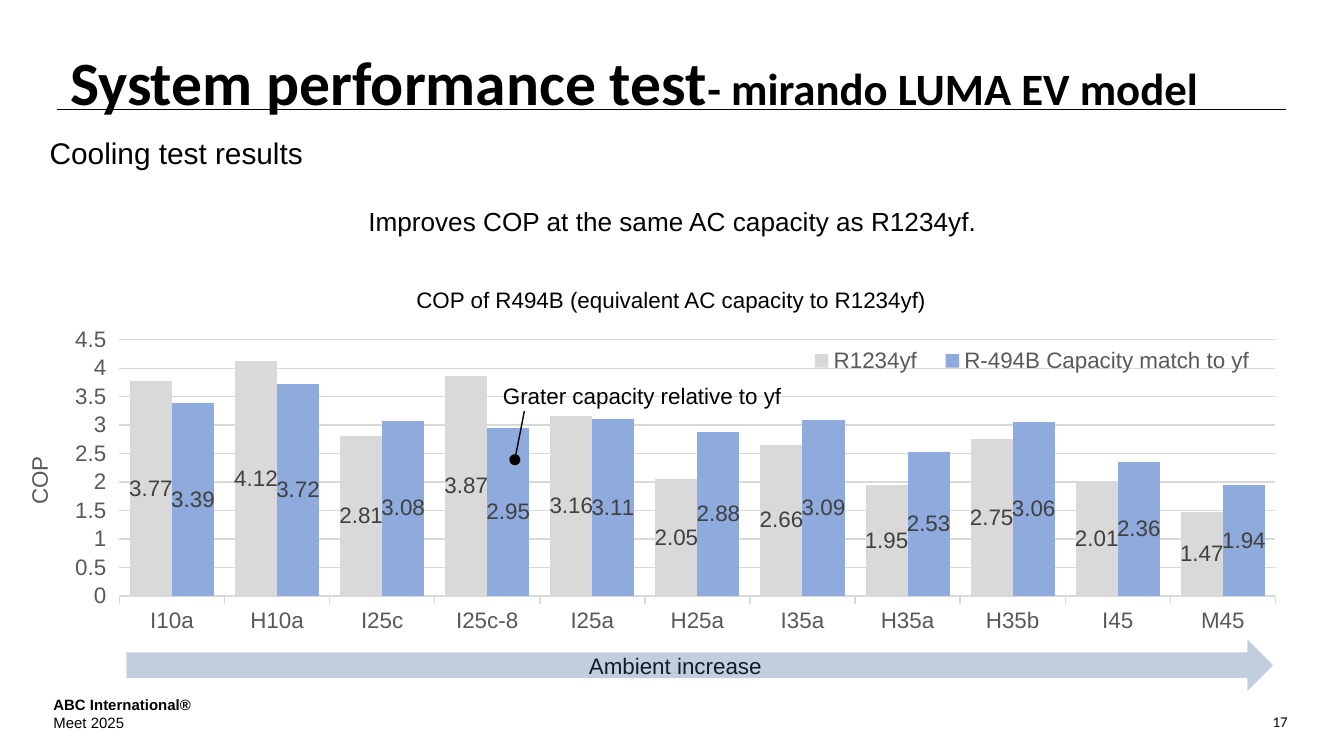
from lxml.etree import SubElement
from pptx import Presentation
from pptx.chart.data import CategoryChartData
from pptx.dml.color import RGBColor
from pptx.enum.chart import XL_CHART_TYPE as ChartType, XL_LABEL_POSITION as LabelPos
from pptx.enum.chart import XL_LEGEND_POSITION as LegendPos, XL_TICK_MARK as Tick
from pptx.enum.shapes import MSO_CONNECTOR as Connector, MSO_SHAPE as Shape
from pptx.enum.text import MSO_ANCHOR as Anchor, PP_ALIGN as Align
from pptx.oxml import parse_xml
from pptx.oxml.ns import nsdecls, qn
from pptx.util import Cm, Pt

BLACK = RGBColor(0x00, 0x00, 0x00)
WHITE = RGBColor(0xFF, 0xFF, 0xFF)
AXIS_GREY = RGBColor(0x59, 0x59, 0x59)
LABEL_GREY = RGBColor(0x40, 0x40, 0x40)
LIGHT_GREY = RGBColor(0xD9, 0xD9, 0xD9)
BAR_BLUE = RGBColor(0x8F, 0xAA, 0xDC)
ARROW_BLUE = RGBColor(0x37, 0x60, 0x92)

CONDITIONS = ["I10a", "H10a", "I25c", "I25c-8", "I25a", "H25a",
              "I35a", "H35a", "H35b", "I45", "M45"]
COP_SERIES = [
    ("R1234yf", LIGHT_GREY,
     [3.77, 4.12, 2.81, 3.87, 3.16, 2.05, 2.66, 1.95, 2.75, 2.01, 1.47]),
    ("R-494B Capacity match to yf", BAR_BLUE,
     [3.39, 3.72, 3.08, 2.95, 3.11, 2.88, 3.09, 2.53, 3.06, 2.36, 1.94]),
]


def apply(target, values):
    """Set every attribute in values on the target."""
    for name, value in values.items():
        setattr(target, name, value)


def style_font(font, size, color=BLACK, bold=False, name="Arial"):
    """Give a font its face, size, weight and colour."""
    apply(font, {"name": name, "size": Pt(size), "bold": bold})
    font.color.rgb = color


def add_run(paragraph, text, size, **style):
    """Append a styled run to a paragraph."""
    run = paragraph.add_run()
    run.text = text
    style_font(run.font, size, **style)


def add_text(slide, box, lines, size, align=Align.LEFT, anchor=Anchor.TOP,
             inset=True, after=0, name="Arial"):
    """Place lines of (text, bold) in a box."""
    frame = slide.shapes.add_textbox(*map(Cm, box)).text_frame
    apply(frame, {"word_wrap": True, "vertical_anchor": anchor})
    if not inset:
        apply(frame, dict.fromkeys(
            ("margin_left", "margin_top", "margin_right", "margin_bottom"), 0))
    for index, (text, bold) in enumerate(lines):
        paragraph = frame.add_paragraph() if index else frame.paragraphs[0]
        apply(paragraph, {"alignment": align, "space_after": Pt(after)})
        add_run(paragraph, text, size, bold=bold, name=name)


def add_line(slide, start, end, width, tail=None):
    """Draw a black line with an optional end mark."""
    line = slide.shapes.add_connector(Connector.STRAIGHT, *map(Cm, start + end))
    line.line.width = Pt(width)
    line.line.color.rgb = BLACK
    if tail:
        SubElement(line.line._get_or_add_ln(), qn("a:tailEnd"), type=tail)
    SubElement(line._element.spPr, qn("a:effectLst"))


def add_heading(slide, box):
    """Fill the title placeholder and rule it off."""
    left, top, width, height = box
    title = slide.shapes.title
    apply(title, dict(zip(("left", "top", "width", "height"), map(Cm, box))))
    frame = title.text_frame
    apply(frame, {"word_wrap": True, "vertical_anchor": Anchor.TOP,
                  "margin_top": Cm(0.23), "margin_bottom": 0})
    paragraph = frame.paragraphs[0]
    apply(paragraph, {"alignment": Align.LEFT, "line_spacing": 0.9})
    for text, size in (("System performance test", 33), ("- mirando LUMA EV model", 24)):
        add_run(paragraph, text, size, bold=True, name="Calibri")
    rule_y = top + height + 0.18
    add_line(slide, (left, rule_y), (left + width, rule_y), 0.5)


def add_footer(slide, box):
    """Place the organiser at the left and the page number at the right."""
    left, top, width, height = box
    add_text(slide, (left, top, 7.29, height),
             [("ABC International®", True), ("Meet 2025", False)], 8)
    add_text(slide, (left + width - 5.46, top + 0.31, 5.46, 0.61), [("17", False)], 8,
             align=Align.RIGHT, name="Calibri")


def place_layout(part, x, y, width, height, inner=False):
    """Fix a chart part by fractions of the chart."""
    target = '<c:layoutTarget val="inner"/>' if inner else ""
    layout = parse_xml(
        f'<c:layout {nsdecls("c")}><c:manualLayout>{target}'
        f'<c:xMode val="edge"/><c:yMode val="edge"/><c:x val="{x}"/><c:y val="{y}"/>'
        f'<c:w val="{width}"/><c:h val="{height}"/></c:manualLayout></c:layout>')
    for old in part.findall(qn("c:layout")):
        part.remove(old)
    if inner:
        part.insert(0, layout)
    else:
        part.find(qn("c:legendPos")).addnext(layout)


def add_cop_chart(slide, box):
    """Chart the COP of both refrigerants for each test condition."""
    data = CategoryChartData()
    data.categories = CONDITIONS
    for name, _, values in COP_SERIES:
        data.add_series(name, values)
    chart = slide.shapes.add_chart(ChartType.COLUMN_CLUSTERED, *map(Cm, box), data).chart
    apply(chart, {"has_title": False, "has_legend": True})
    style_font(chart.font, 12)

    apply(chart.legend, {"position": LegendPos.TOP, "include_in_layout": False})
    style_font(chart.legend.font, 12, AXIS_GREY)
    place_layout(chart.legend._element, 0.6, 0.11, 0.37, 0.09)

    plot = chart.plots[0]
    apply(plot, {"gap_width": 50, "overlap": 0, "vary_by_categories": False})
    place_layout(chart._chartSpace.chart.plotArea, 0.076, 0.099, 0.898, 0.681, inner=True)
    for series, (_, color, _) in zip(plot.series, COP_SERIES):
        series.format.fill.solid()
        series.format.fill.fore_color.rgb = color
        apply(series.data_labels, {"show_value": True, "position": LabelPos.CENTER})
        style_font(series.data_labels.font, 12, LABEL_GREY)

    conditions, cop = chart.category_axis, chart.value_axis
    for axis in (conditions, cop):
        apply(axis, {"major_tick_mark": Tick.OUTSIDE, "minor_tick_mark": Tick.NONE})
        style_font(axis.tick_labels.font, 12, AXIS_GREY)
    apply(cop, {"minimum_scale": 0, "maximum_scale": 4.5, "major_unit": 0.5})
    cop.format.line.fill.background()
    for line in (conditions.format.line, cop.major_gridlines.format.line):
        line.width = Pt(0.75)
        line.color.rgb = LIGHT_GREY
    add_run(cop.axis_title.text_frame.paragraphs[0], "COP", 12, color=AXIS_GREY)


def add_centred(slide, box, text, size):
    """Place one centred note without insets."""
    add_text(slide, box, [(text, False)], size, Align.CENTER, Anchor.MIDDLE,
             inset=False, after=3)


def add_capacity_callout(slide, box):
    """Name the highlighted bar and point to it."""
    left, top, _, height = box
    add_centred(slide, box, "Grater capacity relative to yf", 12)
    start = (left + 0.46, top + height - 0.03)
    add_line(slide, start, (start[0] - 0.18, start[1] + 0.92), 0.75, tail="oval")


def add_ambient_arrow(slide, box):
    """Lay a translucent arrow over its label."""
    left, top, width, height = box
    add_centred(slide, (left, top + 0.23, width - 0.92, height - 0.46), "Ambient increase", 12)
    arrow = slide.shapes.add_shape(Shape.RIGHT_ARROW, *map(Cm, box))
    arrow.shadow.inherit = False
    arrow.line.fill.background()
    arrow.fill.solid()
    arrow.fill.fore_color.rgb = ARROW_BLUE
    tint = arrow._element.spPr.find(qn("a:solidFill"))[0]
    SubElement(tint, qn("a:alpha"), val="30000")


def main():
    """Build the slide and save it."""
    deck = Presentation()
    apply(deck, {"slide_width": Cm(25.4), "slide_height": Cm(14.29)})
    slide = deck.slides.add_slide(deck.slide_layouts[5])
    slide.background.fill.solid()
    slide.background.fill.fore_color.rgb = WHITE
    add_heading(slide, (1.07, 0.76, 23.24, 1.12))
    add_footer(slide, (0.76, 13.03, 23.83, 0.94))
    add_cop_chart(slide, (0.41, 5.72, 24.33, 7.11))
    add_text(slide, (0.94, 2.54, 6.78, 0.69), [("Cooling test results", False)], 16,
             inset=False, after=4)
    add_text(slide, (7.47, 5.28, 10.44, 0.76),
             [("COP of R494B (equivalent AC capacity to R1234yf)", False)], 12, Align.CENTER)
    add_centred(slide, (5.23, 3.71, 14.96, 0.94),
                "Improves COP at the same AC capacity as R1234yf.", 14)
    add_capacity_callout(slide, (9.45, 7.16, 5.38, 0.64))
    add_ambient_arrow(slide, (2.39, 12.09, 21.67, 0.97))
    deck.save("out.pptx")


if __name__ == "__main__":
    main()
